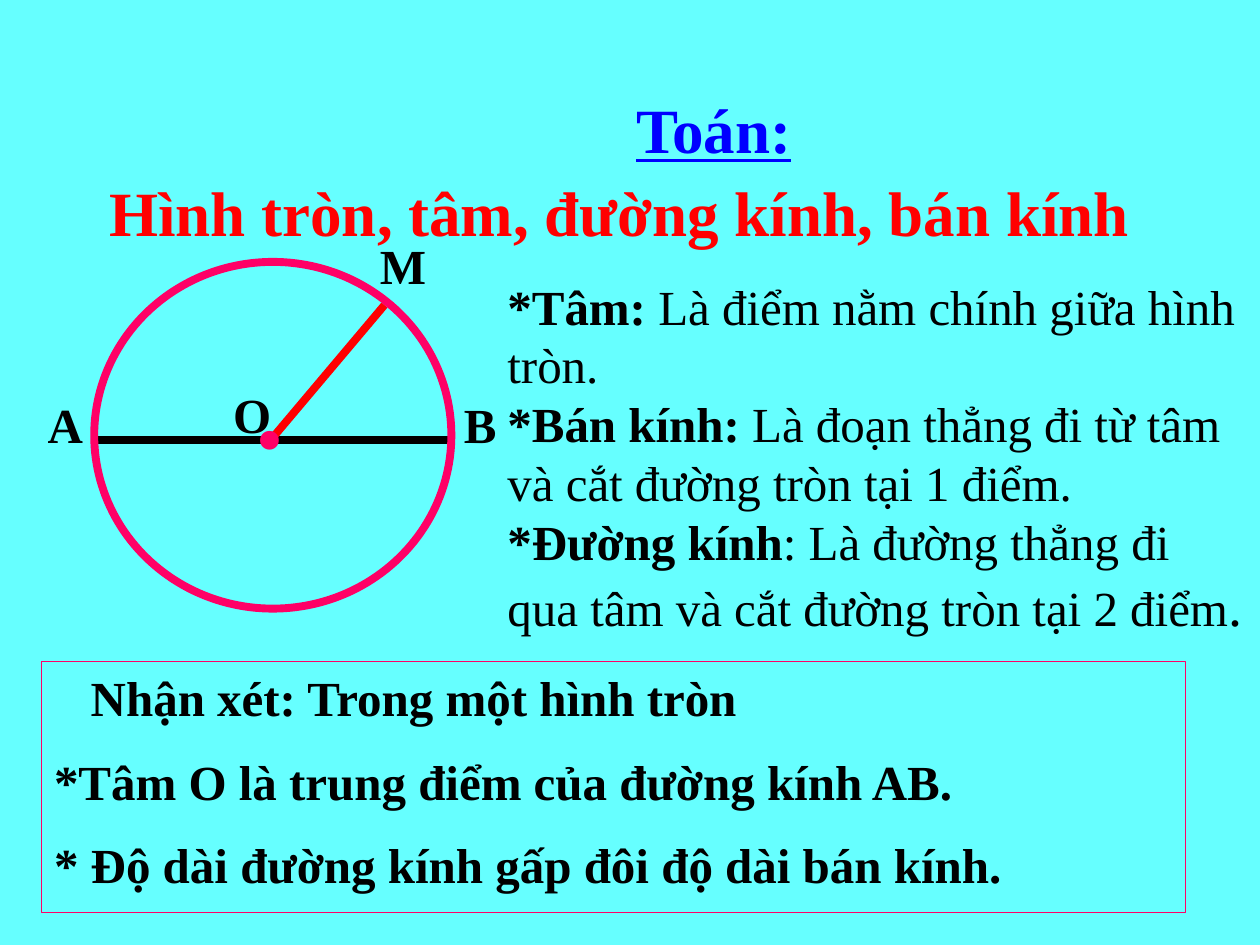
from dataclasses import dataclass

from lxml import etree
from pptx import Presentation
from pptx import util as u
from pptx.dml.color import RGBColor
from pptx.enum import shapes, text
from pptx.oxml.ns import qn

FONT = "Times New Roman"
AQUA = RGBColor(0x66, 0xFF, 0xFF)
BLACK = RGBColor(0, 0, 0)
RED = RGBColor(0xFF, 0, 0)
BLUE = RGBColor(0, 0, 0xFF)
PINK = RGBColor(0xFF, 0, 0x66)


@dataclass(frozen=True)
class Box:
    left: float
    top: float
    width: float
    height: float

    def lengths(self) -> list[u.Length]:
        return [u.Cm(side) for side in (self.left, self.top, self.width, self.height)]


@dataclass(frozen=True)
class Run:
    words: str
    bold: bool = True
    size: float | None = None


@dataclass(frozen=True)
class Segment:
    start: tuple[float, float]
    end: tuple[float, float]
    color: RGBColor


@dataclass(frozen=True)
class PointLabel:
    letter: str
    left: float
    top: float


SEGMENTS = [
    Segment((1.9, 8.87), (9.1, 8.87), BLACK),
    Segment((5.44, 8.89), (7.75, 6.15), RED),
]
POINT_LABELS = [
    PointLabel("A", 0.71, 7.83),
    PointLabel("B", 9.1, 7.83),
    PointLabel("O", 4.45, 7.62),
    PointLabel("M", 7.41, 4.62),
]
REMARKS = [
    [Run("Nhận xét: Trong một hình tròn")],
    [Run("*Tâm O là trung điểm của đường kính AB.")],
    [Run("* Độ dài đường kính gấp đôi độ dài bán kính.")],
]
DEFINITIONS = [
    [Run("*Tâm: "), Run("Là điểm nằm chính giữa hình tròn.", False)],
    [Run("*Bán kính: "),
     Run("Là đoạn thẳng đi từ tâm và cắt đường tròn tại 1 điểm.", False)],
    [Run("*Đường kính"),
     Run(": Là đường thẳng đi qua tâm và cắt đường tròn tại 2 điểm", False),
     Run(".", False, 32)],
]


def write_text(shape, paragraphs: list[list[Run]], *, size: float = 28,
               color: RGBColor = BLACK, align=text.PP_ALIGN.LEFT,
               underline: bool = False, spaced: bool = True,
               first_indent: float = 0) -> None:
    frame = shape.text_frame
    frame.word_wrap = True
    frame.auto_size = text.MSO_AUTO_SIZE.SHAPE_TO_FIT_TEXT
    frame.vertical_anchor = text.MSO_ANCHOR.TOP
    for index, runs in enumerate(paragraphs):
        paragraph = frame.add_paragraph() if index else frame.paragraphs[0]
        paragraph.alignment = align
        properties = paragraph._p.get_or_add_pPr()
        if spaced:
            before = etree.SubElement(properties, qn("a:spcBef"))
            etree.SubElement(before, qn("a:spcPct"), val="50000")
        if first_indent and index == 0:
            properties.set("indent", str(u.Cm(first_indent)))
        for part in runs:
            run = paragraph.add_run()
            run.text = part.words
            run.font.name = FONT
            run.font.size = u.Pt(part.size or size)
            run.font.bold = part.bold
            run.font.underline = underline
            run.font.color.rgb = color


def add_text(slide, box: Box, paragraphs: list[list[Run]], **text_format) -> None:
    write_text(slide.shapes.add_textbox(*box.lengths()), paragraphs, **text_format)


def add_segment(slide, segment: Segment) -> None:
    ends = [u.Cm(value) for value in segment.start + segment.end]
    line = slide.shapes.add_connector(shapes.MSO_CONNECTOR.STRAIGHT, *ends)
    line.line.color.rgb = segment.color
    line.line.width = u.Pt(4.5)
    etree.SubElement(line._element.spPr, qn("a:effectLst"))


def add_outline(slide, kind: shapes.MSO_SHAPE, box: Box, width: float):
    outline = slide.shapes.add_shape(kind, *box.lengths())
    outline.shadow.inherit = False
    outline.fill.background()
    outline.line.color.rgb = PINK
    outline.line.width = u.Pt(width)
    return outline


def main() -> None:
    deck = Presentation()
    deck.slide_width, deck.slide_height = u.Cm(25.4), u.Cm(19.05)
    slide = deck.slides.add_slide(deck.slide_layouts[6])
    slide.background.fill.solid()
    slide.background.fill.fore_color.rgb = AQUA

    for segment in SEGMENTS:
        add_segment(slide, segment)
    for label in POINT_LABELS:
        add_text(slide, Box(label.left, label.top, 1.7, 1.45), [[Run(label.letter)]])

    remark_frame = add_outline(
        slide, shapes.MSO_SHAPE.RECTANGLE, Box(0.84, 13.34, 23.06, 5.05), 0.75)
    write_text(remark_frame, REMARKS, align=text.PP_ALIGN.JUSTIFY, first_indent=0.74)

    add_outline(slide, shapes.MSO_SHAPE.OVAL, Box(1.9, 5.28, 7.2, 6.99), 4.5)
    add_text(slide, Box(4.9, 6.58, 2.74, 3.05), [[Run(".")]], size=66, color=PINK)

    add_text(slide, Box(-0.43, 3.38, 25.83, 1.78),
             [[Run("Hình tròn, tâm, đường kính, bán kính")]],
             size=36, color=RED, align=text.PP_ALIGN.CENTER)
    add_text(slide, Box(10.16, 1.7, 8.46, 1.78), [[Run("Toán:")]],
             size=36, color=BLUE, align=text.PP_ALIGN.CENTER, underline=True)
    add_text(slide, Box(9.98, 5.44, 15.37, 8.38), DEFINITIONS, spaced=False)

    deck.save("out.pptx")


if __name__ == "__main__":
    main()
